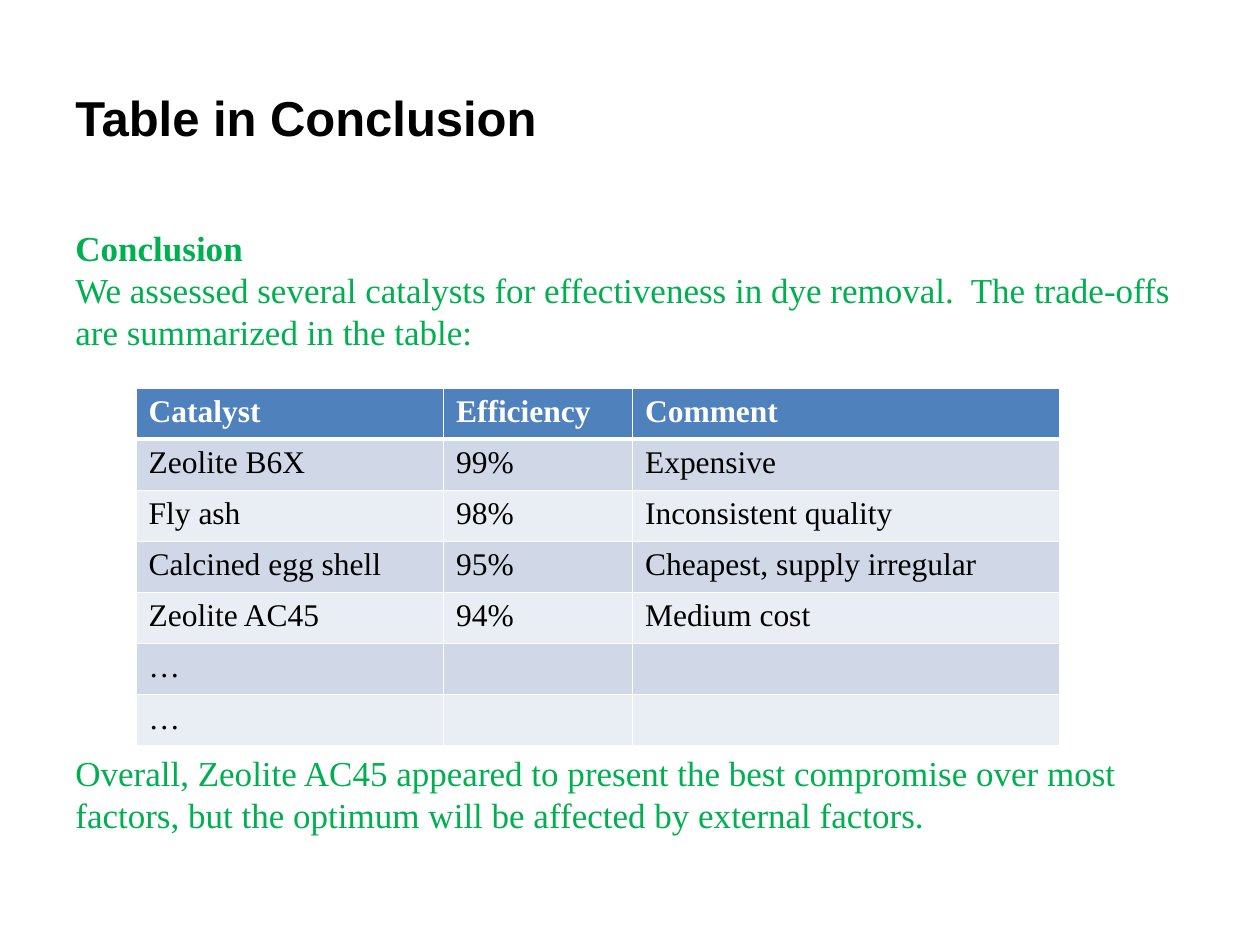
from lxml import etree
from pptx import Presentation
from pptx.dml.color import RGBColor
from pptx.enum import text
from pptx.oxml import ns
from pptx.util import Inches, Pt

BLACK = RGBColor(0x00, 0x00, 0x00)
WHITE = RGBColor(0xFF, 0xFF, 0xFF)
GREEN = RGBColor(0x00, 0xB0, 0x50)
HEADER_BLUE = RGBColor(0x4F, 0x81, 0xBD)
BANDS = [RGBColor(0xE9, 0xED, 0xF4), RGBColor(0xD0, 0xD8, 0xE8)]
SERIF = "Times New Roman"


def style(paragraph, font_name, size, color, bold=False):
    for run in paragraph.runs:
        run.font.name = font_name
        run.font.size = Pt(size)
        run.font.color.rgb = color
        run.font.bold = bold


def add_border(cell, side, points):
    line = etree.SubElement(cell._tc.get_or_add_tcPr(), ns.qn(f"a:{side}"), w=str(Pt(points)))
    fill = etree.SubElement(line, ns.qn("a:solidFill"))
    etree.SubElement(fill, ns.qn("a:srgbClr"), val=str(WHITE))


prs = Presentation()
prs.slide_width, prs.slide_height = Inches(10), Inches(7.5)
slide = prs.slides.add_slide(prs.slide_layouts[6])

# Title
title = slide.shapes.add_textbox(Inches(0.5), Inches(0.3), Inches(9), Inches(1.25)).text_frame
title.word_wrap = True
title.vertical_anchor = text.MSO_ANCHOR.MIDDLE
title.text = "Table in Conclusion"
style(title.paragraphs[0], "Arial", 28, BLACK, bold=True)

# Conclusion text, with room for the table between its two paragraphs
conclusion = slide.shapes.add_textbox(Inches(0.5), Inches(1.75), Inches(9), Inches(4.95)).text_frame
conclusion.word_wrap = True
opening = conclusion.paragraphs[0]
opening.text = (
    "Conclusion\vWe assessed several catalysts for effectiveness in dye removal.  "
    "The trade-offs are summarized in the table:"
)
closing = conclusion.add_paragraph()
closing.text = (
    "Overall, Zeolite AC45 appeared to present the best compromise over most factors, "
    "but the optimum will be affected by external factors."
)
closing.space_before = Pt(228)
for paragraph in (opening, closing):
    paragraph.line_spacing = Pt(24)
    style(paragraph, SERIF, 20, GREEN)
opening.runs[0].font.bold = True

# Catalyst table
catalysts = [
    ("Catalyst", "Efficiency", "Comment"),
    ("Zeolite B6X", "99%", "Expensive"),
    ("Fly ash", "98%", "Inconsistent quality"),
    ("Calcined egg shell", "95%", "Cheapest, supply irregular"),
    ("Zeolite AC45", "94%", "Medium cost"),
    ("…", "", ""),
    ("…", "", ""),
]
column_widths = [2.44, 1.5, 3.39]
table = slide.shapes.add_table(
    len(catalysts), len(column_widths),
    Inches(1.08), Inches(3.08), Inches(sum(column_widths)), Inches(2.84),
).table
for column, width in zip(table.columns, column_widths):
    column.width = Inches(width)

for r, entries in enumerate(catalysts):
    is_header = r == 0
    for c, entry in enumerate(entries):
        cell = table.cell(r, c)
        cell.text = entry
        style(cell.text_frame.paragraphs[0], SERIF, 18, WHITE if is_header else BLACK, bold=is_header)
        # The rule between header and body is thicker
        add_border(cell, "lnL", 1)
        add_border(cell, "lnR", 1)
        add_border(cell, "lnT", 3 if r == 1 else 1)
        add_border(cell, "lnB", 3 if is_header else 1)
        cell.fill.solid()
        cell.fill.fore_color.rgb = HEADER_BLUE if is_header else BANDS[r % 2]

prs.save("out.pptx")
